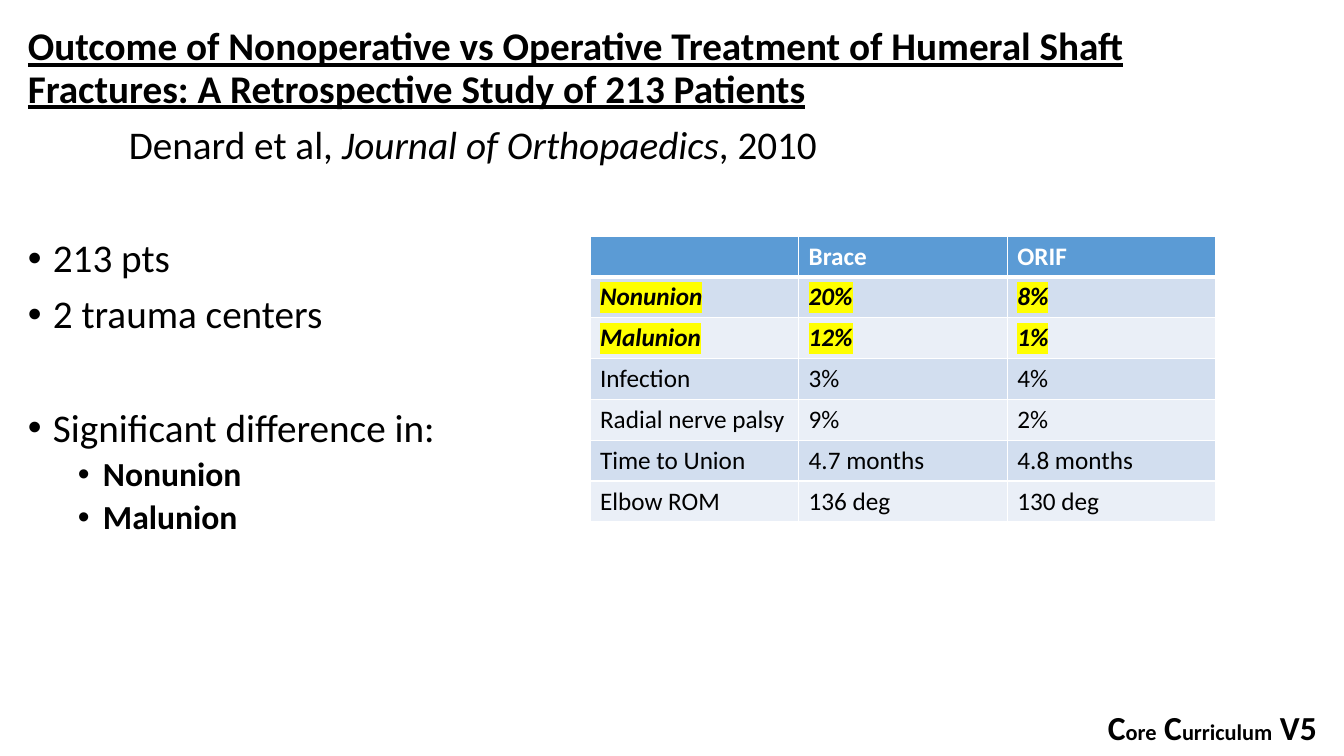
from lxml import etree
from pptx import Presentation
from pptx.dml.color import RGBColor as RGB
from pptx.oxml import parse_xml
from pptx.oxml.ns import nsdecls, qn
from pptx.util import Pt

PX = 12192000 / 1344
BLACK, WHITE = RGB(0, 0, 0), RGB(255, 255, 255)
HEADER = RGB(0x5B, 0x9B, 0xD5)
BANDS = RGB(0xD2, 0xDE, 0xEF), RGB(0xEA, 0xEF, 0xF7)
YELLOW = RGB(255, 255, 0)

CITATION = [("Denard et al, ", {}),
            ("Journal of Orthopaedics", {"italic": True}),
            (", 2010", {})]
TITLE = ("Outcome of Nonoperative vs Operative Treatment of Humeral Shaft "
         "Fractures: A Retrospective Study of 213 Patients")
# text, level, points before; the larger gaps separate the groups
BULLETS = [("213 pts", 0, 50.5), ("2 trauma centers", 0, 10),
           ("Significant difference in:", 0, 50.5),
           ("Nonunion", 1, 5), ("Malunion", 1, 5)]
OUTCOMES = [("", "Brace", "ORIF"),
            ("Nonunion", "20%", "8%"),
            ("Malunion", "12%", "1%"),
            ("Infection", "3%", "4%"),
            ("Radial nerve palsy", "9%", "2%"),
            ("Time to Union", "4.7 months", "4.8 months"),
            ("Elbow ROM", "136 deg", "130 deg")]
SIGNIFICANT = ("Nonunion", "Malunion")
FOOTER = [("C", 24), ("ore", 16), (" C", 24), ("urriculum", 16), (" V5", 24)]


def px(n):
    return round(n * PX)


def add_run(p, text, size, color=BLACK, **fmt):
    r = p.add_run()
    r.text = text
    for name, value in {"name": "Calibri", "size": Pt(size), **fmt}.items():
        setattr(r.font, name, value)
    r.font.color.rgb = color
    return r


def highlight(r, color):
    mark = parse_xml(f'<a:highlight {nsdecls("a")}><a:srgbClr val="{color}"/></a:highlight>')
    r.font._element.find(qn("a:solidFill")).addnext(mark)


def add_text_box(slide, box):
    tf = slide.shapes.add_textbox(*map(px, box)).text_frame
    tf.word_wrap = True
    return tf


def indent(p, left, hanging=0):
    """Indent by px; a hanging indent also gets a bullet."""
    pPr = p._p.get_or_add_pPr()
    pPr.set("marL", str(px(left)))
    pPr.set("indent", str(-px(hanging)))
    if hanging:
        etree.SubElement(pPr, qn("a:buFont"), typeface="Arial")
        etree.SubElement(pPr, qn("a:buChar"), char="•")


def add_body(slide, box):
    tf = add_text_box(slide, box)
    p = tf.paragraphs[0]
    p.line_spacing = 0.9
    add_run(p, TITLE, 28, bold=True, underline=True)

    def next_paragraph(before):
        p = tf.add_paragraph()
        p.line_spacing, p.space_before = 0.9, Pt(before)
        return p

    p = next_paragraph(10)
    indent(p, 101)
    for text, fmt in CITATION:
        add_run(p, text, 28, **fmt)
    for text, level, before in BULLETS:
        p = next_paragraph(before)
        p.level = level
        indent(p, 25 + 50 * level, 25)
        add_run(p, text, 24 if level else 28, bold=bool(level))


def set_borders(cell, widths):
    tcPr = cell._tc.get_or_add_tcPr()
    for i, (side, width) in enumerate(widths.items()):
        tcPr.insert(i, parse_xml(
            f'<a:ln{side} {nsdecls("a")} w="{Pt(width)}"><a:solidFill>'
            f'<a:srgbClr val="{WHITE}"/></a:solidFill></a:ln{side}>'))


def add_outcomes(slide, box):
    rows, cols = len(OUTCOMES), len(OUTCOMES[0])
    table = slide.shapes.add_table(rows, cols, *map(px, box)).table
    for i, row in enumerate(OUTCOMES):
        marked = row[0] in SIGNIFICANT
        for j, text in enumerate(row):
            cell = table.cell(i, j)
            cell.fill.solid()
            cell.fill.fore_color.rgb = BANDS[(i - 1) % 2] if i else HEADER
            set_borders(cell, {"L": 1, "R": 1, "T": 3 if i == 1 else 1,
                               "B": 1 if i else 3})
            if text:
                r = add_run(cell.text_frame.paragraphs[0], text, 18,
                            BLACK if i else WHITE,
                            bold=marked or i == 0, italic=marked)
                if marked:
                    highlight(r, YELLOW)


def add_footer(slide, box):
    p = add_text_box(slide, box).paragraphs[0]
    for text, size in FOOTER:
        add_run(p, text, size, bold=True)


def main():
    prs = Presentation()
    prs.slide_width, prs.slide_height = px(1344), px(756)
    slide = prs.slides.add_slide(prs.slide_layouts[6])
    add_footer(slide, (1098, 702, 237, 50))
    add_body(slide, (18, 22, 1163, 558))
    add_outcomes(slide, (590, 236, 626, 286))
    prs.save("out.pptx")


if __name__ == "__main__":
    main()
